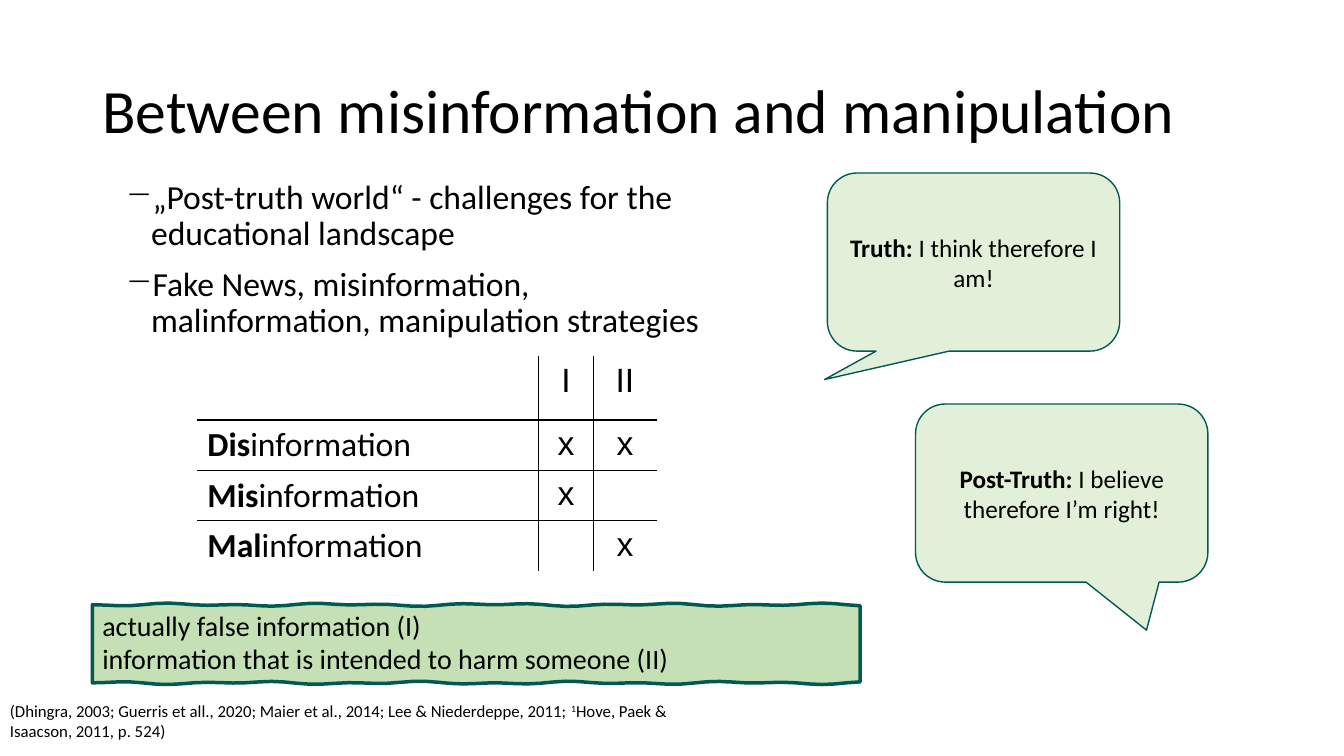
from math import sin

from lxml.etree import SubElement
from pptx import Presentation
from pptx.dml.color import RGBColor
from pptx.enum.shapes import MSO_SHAPE
from pptx.enum.text import MSO_ANCHOR, PP_ALIGN
from pptx.oxml import parse_xml
from pptx.oxml.ns import nsdecls, qn
from pptx.util import Inches, Pt

COLORS = {"text": "000000", "paper": "FFFFFF", "outline": "025952",
          "note": "C5E0B4", "bubble": "E2F0D9"}
UNIT = Inches(13.333) / 16


def grid(*lengths):
    """Convert lengths on the 16 by 9 slide grid to EMU."""
    return [round(length * UNIT) for length in lengths]


def color(name):
    """Return a palette colour."""
    return RGBColor.from_string(COLORS[name])


def write(paragraph, runs, size, font="Calibri", align=PP_ALIGN.LEFT):
    """Write (text, bold) runs into a paragraph and format it."""
    for text, bold in runs:
        run = paragraph.add_run()
        run.text = text
        if bold:
            run.font.bold = True
    paragraph.alignment = align
    paragraph.font.size = Pt(size)
    paragraph.font.name = font
    paragraph.font.color.rgb = color("text")


def add_paragraphs(frame, count):
    """Return the given number of paragraphs of an empty text frame."""
    return [frame.paragraphs[0]] + [frame.add_paragraph() for _ in range(count - 1)]


def paint(shape, fill, width):
    """Give a shape its fill and outline without a shadow."""
    shape.shadow.inherit = False
    shape.fill.solid()
    shape.fill.fore_color.rgb = color(fill)
    shape.line.color.rgb = color("outline")
    shape.line.width = Pt(width)


def add_title(slide, box, text):
    """Place the slide title."""
    title = slide.shapes.title
    title.left, title.top, title.width, title.height = grid(*box)
    title.text_frame.vertical_anchor = MSO_ANCHOR.MIDDLE
    paragraph = title.text_frame.paragraphs[0]
    write(paragraph, [(text, False)], 44)
    paragraph.line_spacing = 0.9


def add_points(slide, box, points):
    """Place the dashed list."""
    frame = slide.shapes.add_textbox(*grid(*box)).text_frame
    frame.word_wrap = True
    for index, paragraph in enumerate(add_paragraphs(frame, len(points))):
        properties = paragraph._p.get_or_add_pPr()
        properties.set("marL", str(Inches(0.25)))
        properties.set("indent", str(Inches(-0.25)))
        SubElement(properties, qn("a:buChar")).set("char", "−")
        write(paragraph, [(points[index], False)], 24)
        paragraph.line_spacing = 0.9
        paragraph.space_before = Pt(10 if index else 0)


def add_sources(slide, box, before, mark, after):
    """Place the citations with a raised mark between two parts."""
    frame = slide.shapes.add_textbox(*grid(*box)).text_frame
    frame.word_wrap = True
    paragraph = frame.paragraphs[0]
    write(paragraph, [(before, False), (mark, False), (after, False)], 12)
    paragraph.runs[1]._r.get_or_add_rPr().set("baseline", "30000")


def set_borders(cell, outer):
    """Draw cell borders, white on the sides that lie on the table edge."""
    properties = cell._tc.get_or_add_tcPr()
    for index, side in enumerate("LRTB"):
        line_color = COLORS["paper" if side in outer else "text"]
        properties.insert(index, parse_xml(
            f'<a:ln{side} {nsdecls("a")} w="12700"><a:solidFill>'
            f'<a:srgbClr val="{line_color}"/></a:solidFill></a:ln{side}>'))


def add_types_table(slide, box, widths, heights, rows):
    """Place the table that marks each kind of information."""
    table = slide.shapes.add_table(len(rows), len(widths), *grid(*box)).table
    table.first_row = table.horz_banding = False
    for column, width in zip(table.columns, grid(*widths)):
        column.width = width
    for row, height in zip(table.rows, grid(*heights)):
        row.height = height
    for i, values in enumerate(rows):
        for j, runs in enumerate(values):
            cell = table.cell(i, j)
            cell.fill.background()
            edges = {"L": j == 0, "R": j == len(widths) - 1,
                     "T": i == 0, "B": i == len(rows) - 1}
            set_borders(cell, [side for side, on_edge in edges.items() if on_edge])
            font, align = ("Arial", PP_ALIGN.CENTER) if j else ("Calibri", PP_ALIGN.LEFT)
            write(cell.text_frame.paragraphs[0], runs, 24, font, align)


def add_note(slide, box, lines):
    """Place the hand-drawn box that explains the table columns."""
    left, top, width, height = grid(*box)
    steps = 60
    wave = [(left + width * k / steps, UNIT * 0.02 * sin(k * 0.8) * sin(k * 0.3))
            for k in range(steps + 1)]
    points = [(x, top + rise) for x, rise in wave]
    points += [(x, top + height - rise) for x, rise in reversed(wave)]
    builder = slide.shapes.build_freeform(*map(round, points[0]))
    builder.add_line_segments([(round(x), round(y)) for x, y in points[1:]], close=True)
    shape = builder.convert_to_shape()
    paint(shape, "note", 2.5)
    frame = shape.text_frame
    frame.word_wrap = True
    frame.vertical_anchor = MSO_ANCHOR.TOP
    for paragraph, line in zip(add_paragraphs(frame, len(lines)), lines):
        write(paragraph, [(line, False)], 20)


def add_bubble(slide, box, tip, speaker, words):
    """Place a speech bubble whose tip is given as shares from its centre."""
    shape = slide.shapes.add_shape(MSO_SHAPE.ROUNDED_RECTANGULAR_CALLOUT, *grid(*box))
    shape.adjustments[0], shape.adjustments[1] = tip
    paint(shape, "bubble", 1)
    shape.text_frame.word_wrap = True
    shape.text_frame.vertical_anchor = MSO_ANCHOR.MIDDLE
    write(shape.text_frame.paragraphs[0], [(speaker, True), (words, False)], 18,
          align=PP_ALIGN.CENTER)


def main():
    """Build and save the slide."""
    presentation = Presentation()
    presentation.slide_width, presentation.slide_height = grid(16, 9)
    slide = presentation.slides.add_slide(presentation.slide_layouts[5])
    add_title(slide, (1.1, 0.48, 13.8, 1.74), "Between misinformation and manipulation")
    add_points(slide, (1.38, 2.09, 7.4, 6.05), [
        "„Post-truth world“ - challenges for the educational landscape",
        "Fake News, misinformation, malinformation, manipulation strategies"])
    add_sources(slide, (0, 8.28, 8.32, 0.48),
                "(Dhingra, 2003; Guerris et all., 2020; Maier et al., 2014; "
                "Lee & Niederdeppe, 2011; ", "1", "Hove, Paek & Isaacson, 2011, p. 524)")
    cross, empty = [("x", False)], []
    kinds = [("Dis", cross, cross), ("Mis", cross, empty), ("Mal", empty, cross)]
    rows = [[empty, [("I", False)], [("II", False)]]]
    rows += [[[(prefix, True), ("information", False)], first, second]
             for prefix, first, second in kinds]
    add_types_table(slide, (2.35, 4.25, 5.46, 2.55), (4.06, 0.66, 0.74),
                    (0.75, 0.6, 0.6, 0.6), rows)
    add_note(slide, (1.1, 7.2, 9.14, 0.93), [
        "actually false information (I)",
        "information that is intended to harm someone (II)"])
    add_bubble(slide, (9.85, 2.06, 3.48, 2.12), (-0.51, 0.66),
               "Truth: ", "I think therefore I am!")
    add_bubble(slide, (10.9, 4.81, 3.48, 2.12), (0.29, 0.77),
               "Post-Truth: ", "I believe therefore I’m right!")
    presentation.save("out.pptx")


if __name__ == "__main__":
    main()
